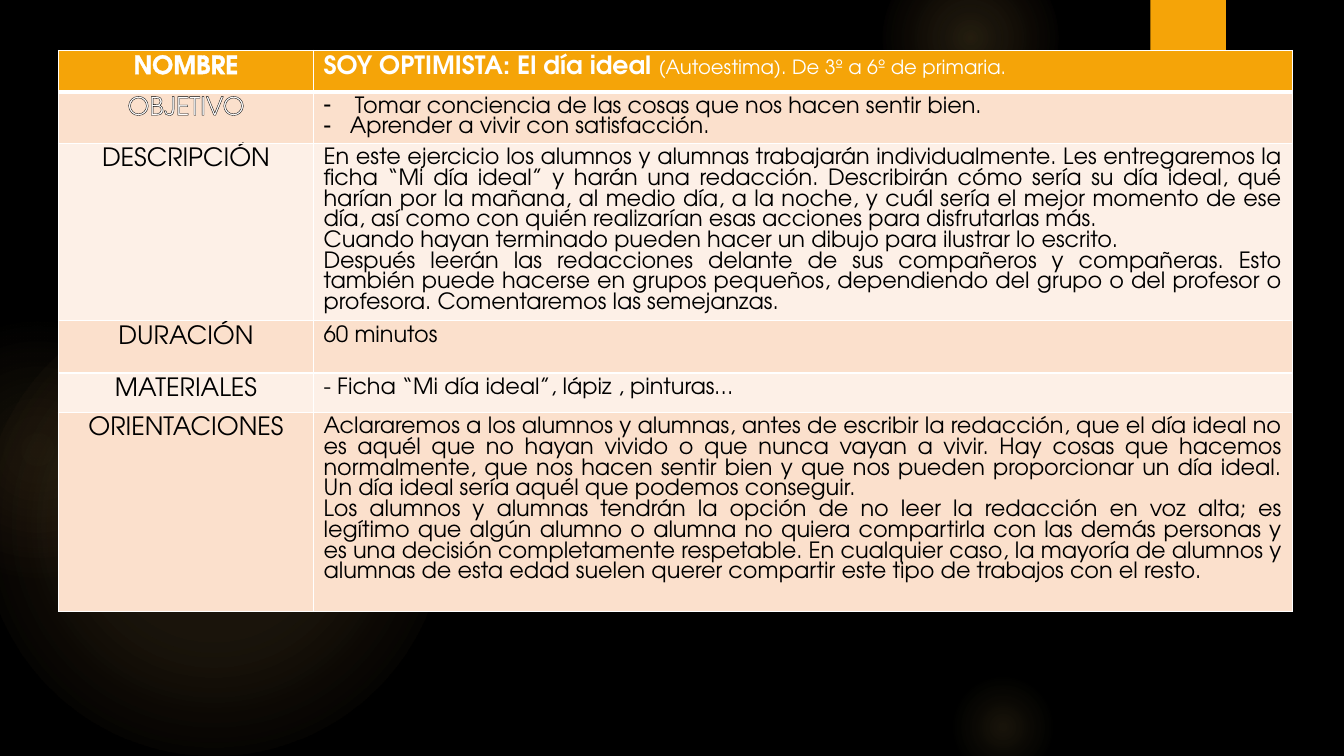
from lxml.etree import SubElement, fromstring
from pptx import Presentation
from pptx.dml.color import RGBColor
from pptx.enum.shapes import MSO_SHAPE
from pptx.enum.text import PP_ALIGN
from pptx.oxml.ns import qn
from pptx.util import Inches, Pt

FONT = "TeX Gyre Adventor"
COLORS = {"black": "000000", "white": "FFFFFF", "gold": "F5A408",
          "glow": "FAC96A", "rose": "F59B74", "peach": "FBE0CC", "cream": "FDF0E7"}

# Head row: label, then runs of (text, size, bold)
HEAD = ("NOMBRE", [("SOY OPTIMISTA: El día ideal ", 18, True),
                   ("(Autoestima). De 3º a 6º de primaria.", 14, False)])

# Body rows: label, kind of text, paragraphs
BODY = [
    ("OBJETIVO", "list", [
        "Tomar conciencia de las cosas que nos hacen sentir bien.",
        "Aprender a vivir con satisfacción."]),
    ("DESCRIPCIÓN", "prose", [
        "En este ejercicio los alumnos y alumnas trabajarán individualmente. Les entregaremos la "
        "ficha “Mi día ideal” y harán una redacción. Describirán cómo sería su día ideal, qué "
        "harían por la mañana, al medio día, a la noche, y cuál sería el mejor momento de ese "
        "día, así como con quién realizarían esas acciones para disfrutarlas más.",
        "Cuando hayan terminado pueden hacer un dibujo para ilustrar lo escrito.",
        "Después leerán las redacciones delante de sus compañeros y compañeras. Esto "
        "también puede hacerse en grupos pequeños, dependiendo del grupo o del profesor o "
        "profesora. Comentaremos las semejanzas."]),
    ("DURACIÓN", "plain", ["60 minutos"]),
    ("MATERIALES", "plain", ["- Ficha “Mi día ideal”, lápiz , pinturas…"]),
    ("ORIENTACIONES", "prose", [
        "Aclararemos a los alumnos y alumnas, antes de escribir la redacción, que el día ideal no "
        "es aquél que no hayan vivido o que nunca vayan a vivir. Hay cosas que hacemos "
        "normalmente, que nos hacen sentir bien y que nos pueden proporcionar un día ideal. "
        "Un día ideal sería aquél que podemos conseguir.",
        "Los alumnos y alumnas tendrán la opción de no leer la redacción en voz alta; es "
        "legítimo que algún alumno o alumna no quiera compartirla con las demás personas y "
        "es una decisión completamente respetable. En cualquier caso, la mayoría de alumnos y "
        "alumnas de esta edad suelen querer compartir este tipo de trabajos con el resto."]),
]
COLS = [2.53, 9.71]
ROWS = [0.41, 0.51, 1.76, 0.52, 0.39, 1.98]
INDENTS = [0.31, 0.26]

# Glows: left, top, size, then stops of (place, color, opacity)
GLOWS = [
    (-0.17, 2.92, 4.58, [(0, "glow", 11), (36, "glow", 10), (75, "glow", 0)]),
    (-0.92, 3.17, 2.58, [(0, "glow", 8), (36, "glow", 5), (71, "rose", 0)]),
    (9.41, 1.83, 3.08, [(0, "glow", 7), (36, "glow", 6), (69, "glow", 0)]),
    (8.75, -0.5, 1.75, [(0, "glow", 14), (36, "glow", 7), (73, "glow", 0)]),
    (9.41, 6.67, 1.08, [(0, "glow", 10), (31, "glow", 5), (66, "glow", 0)]),
]
SPACE = "http://schemas.openxmlformats.org/drawingml/2006/main"


def paint(fill, name):
    fill.solid()
    fill.fore_color.rgb = RGBColor.from_string(COLORS[name])


def line(tag, name, width):
    return fromstring(f'<a:{tag} xmlns:a="{SPACE}" w="{Pt(width)}"><a:solidFill>'
                      f'<a:srgbClr val="{COLORS[name]}"/></a:solidFill></a:{tag}>')


def add_shape(slide, kind, *box):
    shape = slide.shapes.add_shape(kind, *map(Inches, box))
    shape.shadow.inherit = False
    shape.line.fill.background()
    return shape


def add_glow(slide, left, top, size, stops):
    shape = add_shape(slide, MSO_SHAPE.OVAL, left, top, size, size)
    marks = "".join(
        f'<a:gs pos="{place * 1000}"><a:srgbClr val="{COLORS[name]}">'
        f'<a:alpha val="{alpha * 1000}"/></a:srgbClr></a:gs>' for place, name, alpha in stops)
    grad = fromstring(
        f'<a:gradFill xmlns:a="{SPACE}" rotWithShape="1"><a:gsLst>{marks}</a:gsLst>'
        '<a:path path="circle"><a:fillToRect l="50000" t="50000" r="50000" b="50000"/>'
        '</a:path></a:gradFill>')
    shape.element.spPr.find(qn("a:prstGeom")).addnext(grad)


def style(para, run, size, color, bold=False, edge=None):
    para.line_spacing = Pt(round(max(r.font.size.pt if r.font.size else size
                                     for r in para.runs) * 0.925, 1))
    font = run.font
    font.name, font.size, font.bold = FONT, Pt(size), bold
    paint(font.fill, color)
    if edge:
        run._r.get_or_add_rPr().insert(0, line("ln", edge, 0.75))


def add_label(cell, text, color, edge, bold=False):
    para = cell.text_frame.paragraphs[0]
    para.text = text
    para.alignment = PP_ALIGN.CENTER
    style(para, para.runs[0], 18, color, bold, edge)


def add_dash(para, indent):
    props = para._p.get_or_add_pPr()
    props.set("marL", str(Inches(indent)))
    props.set("indent", str(-Inches(indent)))
    SubElement(props, qn("a:buChar")).set("char", "-")


def dress(cell, color, base):
    paint(cell.fill, color)
    props = cell._tc.get_or_add_tcPr()
    for i, (tag, width) in enumerate([("lnL", 1), ("lnR", 1), ("lnT", 1), ("lnB", base)]):
        props.insert(i, line(tag, "white", width))


def main():
    deck = Presentation()
    deck.slide_width, deck.slide_height = Inches(13.33), Inches(7.5)
    slide = deck.slides.add_slide(deck.slide_layouts[6])
    paint(slide.background.fill, "black")

    # Backdrop
    for glow in GLOWS:
        add_glow(slide, *glow)
    paint(add_shape(slide, MSO_SHAPE.RECTANGLE, 11.41, 0, 0.75, 1.25).fill, "gold")

    # Table grid
    box = map(Inches, (0.58, 0.5, sum(COLS), sum(ROWS)))
    table = slide.shapes.add_table(len(ROWS), len(COLS), *box).table
    for col, width in zip(table.columns, COLS):
        col.width = Inches(width)
    for i, (row, height) in enumerate(zip(table.rows, ROWS)):
        row.height = Inches(height)
        for cell in row.cells:
            dress(cell, ("peach" if i % 2 else "cream") if i else "gold", 1 if i else 3)

    # Head row
    label, parts = HEAD
    add_label(table.cell(0, 0), label, "white", "white", True)
    para = table.cell(0, 1).text_frame.paragraphs[0]
    for text, size, bold in parts:
        run = para.add_run()
        run.text = text
        style(para, run, size, "white", bold)

    # Body rows
    for i, (label, kind, texts) in enumerate(BODY, 1):
        add_label(table.cell(i, 0), label, "white" if i == 1 else "black", "black")
        frame = table.cell(i, 1).text_frame
        frame.text = "\n".join(texts)
        for j, para in enumerate(frame.paragraphs):
            style(para, para.runs[0], 16, "black")
            if kind == "prose":
                para.alignment = PP_ALIGN.JUSTIFY
            elif kind == "list":
                add_dash(para, INDENTS[j])

    deck.save("out.pptx")


if __name__ == "__main__":
    main()
